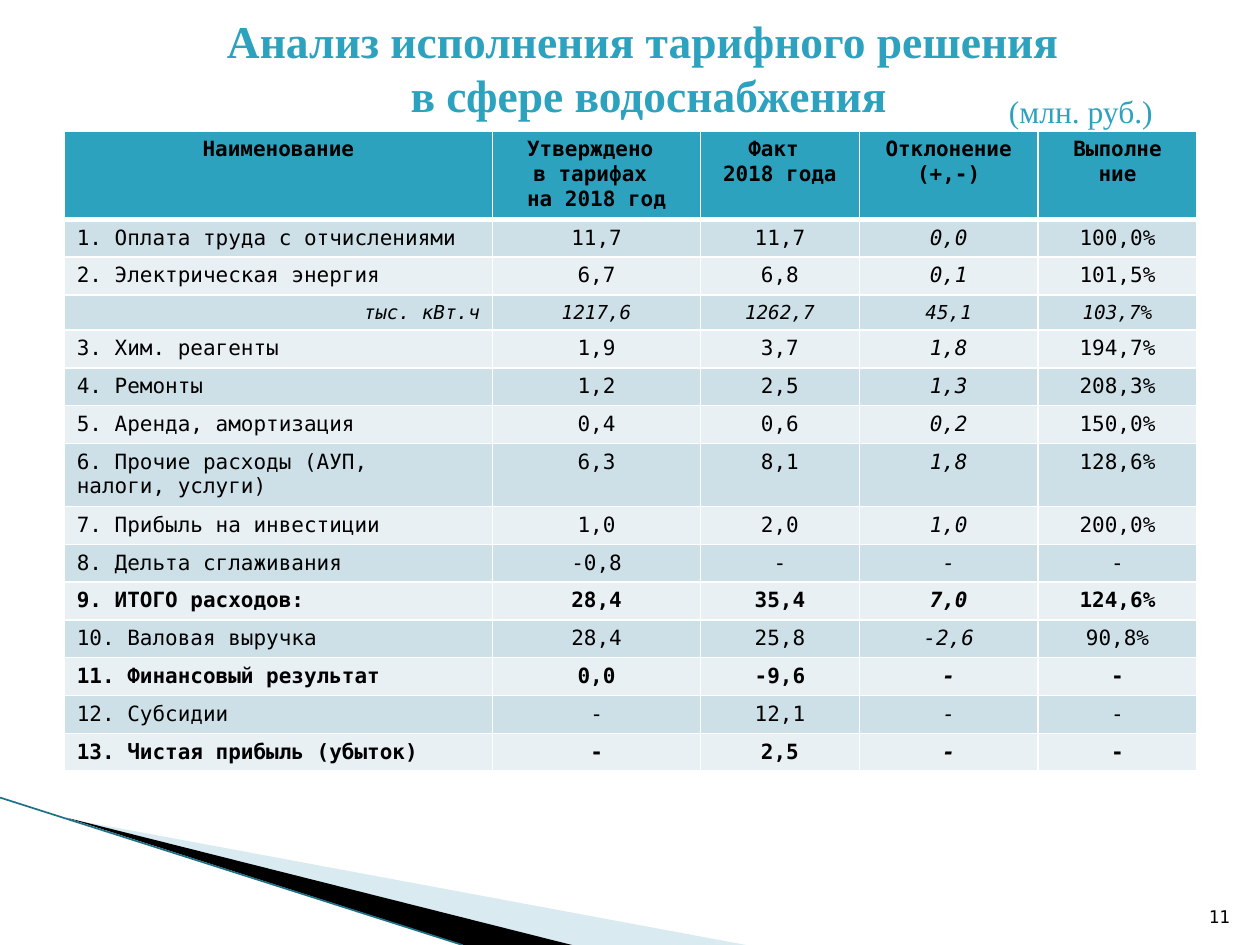
from lxml.etree import SubElement
from pptx import Presentation
from pptx.dml.color import RGBColor
from pptx.enum.text import MSO_ANCHOR, MSO_AUTO_SIZE, PP_ALIGN
from pptx.oxml.ns import qn
from pptx.util import Inches, Pt

TEAL, BLACK, WHITE = "2DA2BF", "000000", "FFFFFF"
BANDS = ("E8F0F4", "CDE0E8")
SERIF, MONO = "Times New Roman", "DejaVu Sans Mono"

TITLE_LINES = ("Анализ исполнения тарифного решения ", "в сфере водоснабжения")
UNIT = "(млн. руб.)"
PAGE = "11"
HEADER = ("Наименование", "Утверждено \nв тарифах \nна 2018 год",
          "Факт \n2018 года", "Отклонение (+,-)", "Выполне\nние")
COSTS = [
    ("1. Оплата труда с отчислениями", "11,7", "11,7", "0,0", "100,0%"),
    ("2. Электрическая энергия", "6,7", "6,8", "0,1", "101,5%"),
    ("тыс. кВт.ч", "1217,6", "1262,7", "45,1", "103,7%"),
    ("3. Хим. реагенты", "1,9", "3,7", "1,8", "194,7%"),
    ("4. Ремонты", "1,2", "2,5", "1,3", "208,3%"),
    ("5. Аренда, амортизация", "0,4", "0,6", "0,2", "150,0%"),
    ("6. Прочие расходы (АУП,\vналоги, услуги)", "6,3", "8,1", "1,8", "128,6%"),
    ("7. Прибыль на инвестиции", "1,0", "2,0", "1,0", "200,0%"),
    ("8. Дельта сглаживания", "-0,8", "-", "-", "-"),
    ("9. ИТОГО расходов:", "28,4", "35,4", "7,0", "124,6%"),
    ("10. Валовая выручка", "28,4", "25,8", "-2,6", "90,8%"),
    ("11. Финансовый результат", "0,0", "-9,6", "-", "-"),
    ("12. Субсидии", "-", "12,1", "-", "-"),
    ("13. Чистая прибыль (убыток)", "-", "2,5", "-", "-"),
]
HEADER_ROW, ENERGY_ROW, DEVIATION_COLUMN = 0, 3, 3
TOTAL_ROWS = (10, 12, 14)
COLUMN_WIDTHS = (3.4, 1.65, 1.26, 1.42, 1.26)
ROW_HEIGHT, SPECIAL_HEIGHTS = 0.3, {HEADER_ROW: 0.7, ENERGY_ROW: 0.28, 7: 0.5}
WEDGES = [
    ("A0CBDC", 40, [(0.55, 6.5), (5.92, 7.5), (4.54, 7.5)]),
    (BLACK, 100, [(0.53, 6.49), (4.54, 7.5), (3.68, 7.5)]),
]
EDGE_START, EDGE_END, EDGE_COLOR = (0, 6.33), (3.67, 7.5), "1D7085"


def rgb(value):
    return RGBColor.from_string(value)


def style(paragraph, face, size, color, align, bold=False, italic=False):
    paragraph.alignment = align
    font = paragraph.font
    font.name, font.size, font.bold, font.italic = face, Pt(size), bold, italic
    font.color.rgb = rgb(color)


def add_wedge(slide, color, opacity, points):
    inches = [(Inches(x), Inches(y)) for x, y in points]
    builder = slide.shapes.build_freeform(*inches[0])
    builder.add_line_segments(inches[1:])
    wedge = builder.convert_to_shape()
    wedge.shadow.inherit = False
    wedge.line.fill.background()
    wedge.fill.solid()
    wedge.fill.fore_color.rgb = rgb(color)
    if opacity < 100:
        tint = next(wedge.fill._xPr.iter(qn("a:srgbClr")))
        SubElement(tint, qn("a:alpha"), val=str(opacity * 1000))


def add_edge(slide):
    edge = slide.shapes.add_connector(1, *map(Inches, EDGE_START + EDGE_END))
    edge.line.color.rgb = rgb(EDGE_COLOR)
    edge.line.width = Pt(0.95)
    SubElement(edge._element.spPr, qn("a:effectLst"))


def add_borders(cell, bottom_width, top_width):
    properties = cell._tc.get_or_add_tcPr()
    widths = (("L", 1), ("R", 1), ("T", top_width), ("B", bottom_width))
    for index, (side, width) in enumerate(widths):
        border = SubElement(properties, qn(f"a:ln{side}"), w=str(Pt(width)))
        SubElement(SubElement(border, qn("a:solidFill")), qn("a:srgbClr"), val=WHITE)
        properties.insert(index, border)


def add_costs(slide):
    rows = [HEADER] + COSTS
    heights = [SPECIAL_HEIGHTS.get(row, ROW_HEIGHT) for row in range(len(rows))]
    table = slide.shapes.add_table(
        len(rows), len(HEADER), Inches(0.51), Inches(1.04),
        Inches(sum(COLUMN_WIDTHS)), Inches(sum(heights))).table
    for column, width in zip(table.columns, COLUMN_WIDTHS):
        column.width = Inches(width)
    for row, values in enumerate(rows):
        table.rows[row].height = Inches(heights[row])
        heading, energy = row == HEADER_ROW, row == ENERGY_ROW
        for column, value in enumerate(values):
            cell = table.cell(row, column)
            cell.text = value
            cell.fill.solid()
            cell.fill.fore_color.rgb = rgb(TEAL if heading else BANDS[row % 2])
            add_borders(cell, 3 if heading else 1, 3 if row == 1 else 1)
            align = PP_ALIGN.CENTER
            if column == 0 and not heading:
                align = PP_ALIGN.RIGHT if energy else PP_ALIGN.LEFT
            italic = energy or (column == DEVIATION_COLUMN and not heading)
            for paragraph in cell.text_frame.paragraphs:
                style(paragraph, MONO, 11 if energy else 12, BLACK, align,
                      heading or row in TOTAL_ROWS, italic)


def add_title(slide):
    title = slide.shapes.title
    title.left, title.top, title.width, title.height = map(Inches, (0.5, 0, 9.3, 1.07))
    frame = title.text_frame
    frame.auto_size, frame.vertical_anchor = MSO_AUTO_SIZE.NONE, MSO_ANCHOR.MIDDLE
    frame.text = "\v".join(TITLE_LINES)
    style(frame.paragraphs[0], SERIF, 26, TEAL, PP_ALIGN.CENTER, bold=True)


def add_label(slide, text, place, anchor, *look):
    frame = slide.shapes.add_textbox(*map(Inches, place)).text_frame
    frame.word_wrap, frame.vertical_anchor = True, anchor
    frame.text = text
    style(frame.paragraphs[0], *look)


def main():
    """Build the water supply tariff slide."""
    deck = Presentation()
    deck.slide_width, deck.slide_height = Inches(10), Inches(7.5)
    slide = deck.slides.add_slide(deck.slide_layouts[5])
    for wedge in WEDGES:
        add_wedge(slide, *wedge)
    add_edge(slide)
    add_costs(slide)
    add_title(slide)
    add_label(slide, PAGE, (9.46, 7.01, 0.4, 0.4), MSO_ANCHOR.BOTTOM,
              MONO, 10, BLACK, PP_ALIGN.RIGHT)
    add_label(slide, UNIT, (7.91, 0.68, 1.57, 0.4), MSO_ANCHOR.TOP,
              SERIF, 18, TEAL, PP_ALIGN.LEFT)
    deck.save("out.pptx")


if __name__ == "__main__":
    main()
